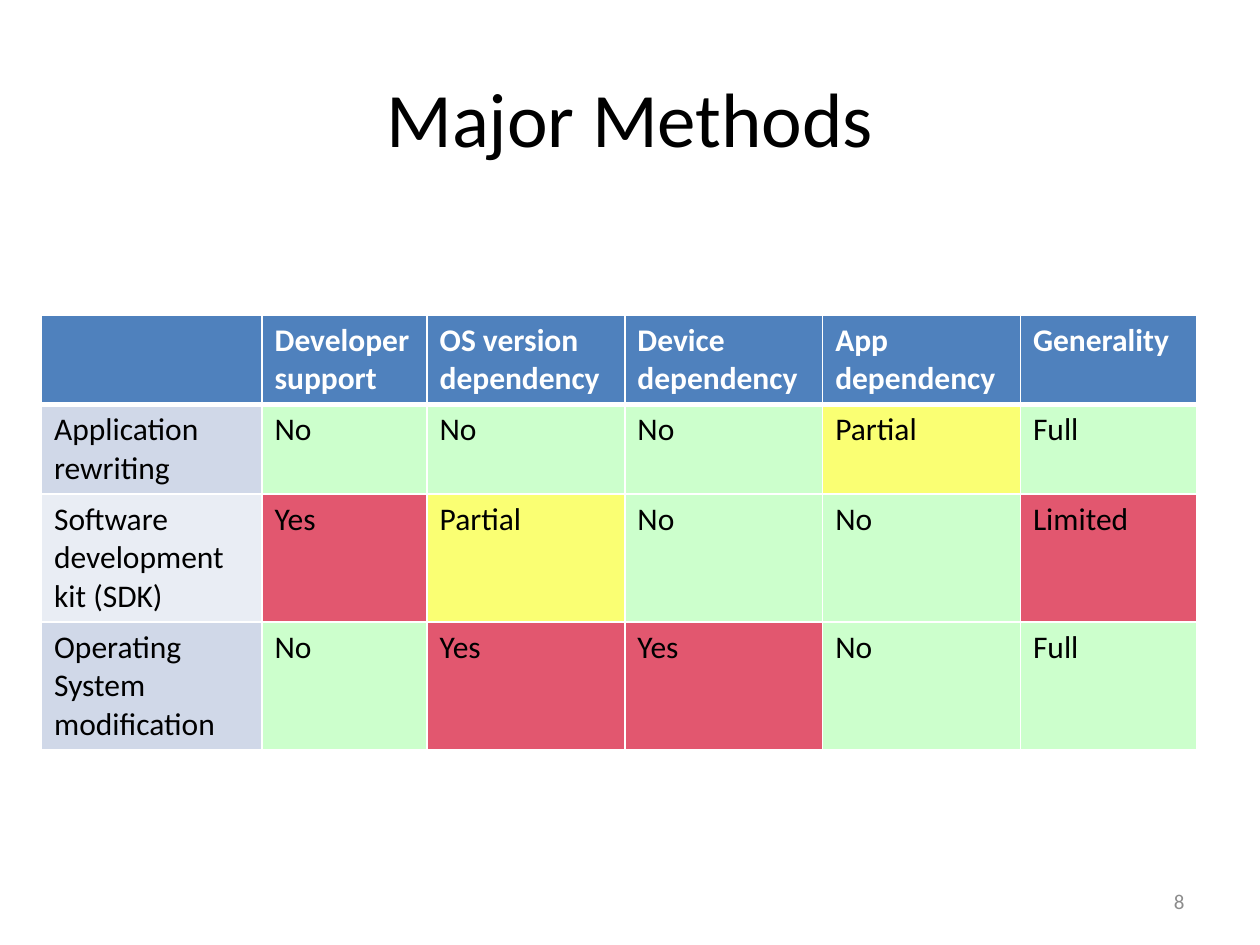
from dataclasses import dataclass

from lxml.etree import SubElement
from pptx import Presentation
from pptx.dml.color import RGBColor
from pptx.enum.text import MSO_ANCHOR, PP_ALIGN
from pptx.oxml.ns import qn
from pptx.util import Inches, Pt

WHITE, BLACK, GRAY = "FFFFFF", "000000", "8C8C8C"
BLUE, BAND, PALE = "4F81BD", "D0D8E8", "E9EDF4"
GREEN, YELLOW, RED = "CCFFCC", "FAFF73", "E2576F"


@dataclass
class Method:
    name: str
    fill: str
    height: float
    marks: list[tuple[str, str]]


NO, FULL = ("No", GREEN), ("Full", GREEN)
YES, PART, LIMIT = ("Yes", RED), ("Partial", YELLOW), ("Limited", RED)

HEADS = ["", "Developer support", "OS version dependency",
         "Device dependency", "App dependency", "Generality"]
WIDTHS = [1.75, 1.31, 1.57, 1.57, 1.57, 1.4]
HEAD_HEIGHT = 0.7
METHODS = [
    Method("Application rewriting", BAND, 0.7, [NO, NO, NO, PART, FULL]),
    Method("Software development kit (SDK)", PALE, 1, [YES, PART, NO, NO, LIMIT]),
    Method("Operating System modification", BAND, 1, [NO, YES, YES, NO, FULL]),
]


def color(code: str) -> RGBColor:
    return RGBColor.from_string(code)


def place(shape, left: float, top: float, width: float, height: float) -> None:
    shape.left, shape.top = Inches(left), Inches(top)
    shape.width, shape.height = Inches(width), Inches(height)


def write(frame, text: str, size: int, code: str,
          align=PP_ALIGN.LEFT, bold: bool = False) -> None:
    para = frame.paragraphs[0]
    para.alignment = align
    run = para.add_run()
    run.text = text
    font = run.font
    font.name, font.size, font.bold = "Calibri", Pt(size), bold
    font.color.rgb = color(code)


def border(cell, top: int, bottom: int) -> None:
    props = cell._tc.get_or_add_tcPr()
    for side, width in zip("LRTB", (1, 1, top, bottom)):
        line = SubElement(props, qn(f"a:ln{side}"), w=str(Pt(width)))
        fill = SubElement(line, qn("a:solidFill"))
        SubElement(fill, qn("a:srgbClr"), val=WHITE)


def paint(cell, text: str, fill: str, row: int) -> None:
    head = row == 0
    border(cell, 3 if row == 1 else 1, 3 if head else 1)
    cell.fill.solid()
    cell.fill.fore_color.rgb = color(fill)
    if text:
        write(cell.text_frame, text, 18, WHITE if head else BLACK, bold=head)


def draw_table(slide) -> None:
    heights = [HEAD_HEIGHT] + [method.height for method in METHODS]
    table = slide.shapes.add_table(
        len(heights), len(WIDTHS), Inches(0.33), Inches(2.5),
        Inches(sum(WIDTHS)), Inches(sum(heights))).table
    for column, width in zip(table.columns, WIDTHS):
        column.width = Inches(width)
    grid = [[(head, BLUE) for head in HEADS]]
    grid += [[(method.name, method.fill)] + method.marks for method in METHODS]
    for row, line in enumerate(grid):
        table.rows[row].height = Inches(heights[row])
        for col, (text, fill) in enumerate(line):
            paint(table.cell(row, col), text, fill, row)


def main() -> None:
    deck = Presentation()
    deck.slide_width, deck.slide_height = Inches(10), Inches(7.5)
    slide = deck.slides.add_slide(deck.slide_layouts[5])

    title = slide.shapes.title
    place(title, 0.5, 0.3, 9, 1.25)
    title.text_frame.vertical_anchor = MSO_ANCHOR.MIDDLE
    write(title.text_frame, "Major Methods", 44, BLACK, PP_ALIGN.CENTER)

    draw_table(slide)

    number = slide.shapes.add_textbox(
        Inches(7.17), Inches(6.95), Inches(2.33), Inches(0.4))
    number.text_frame.word_wrap = True
    number.text_frame.vertical_anchor = MSO_ANCHOR.MIDDLE
    write(number.text_frame, "8", 12, GRAY, PP_ALIGN.RIGHT)

    deck.save("out.pptx")


if __name__ == "__main__":
    main()
